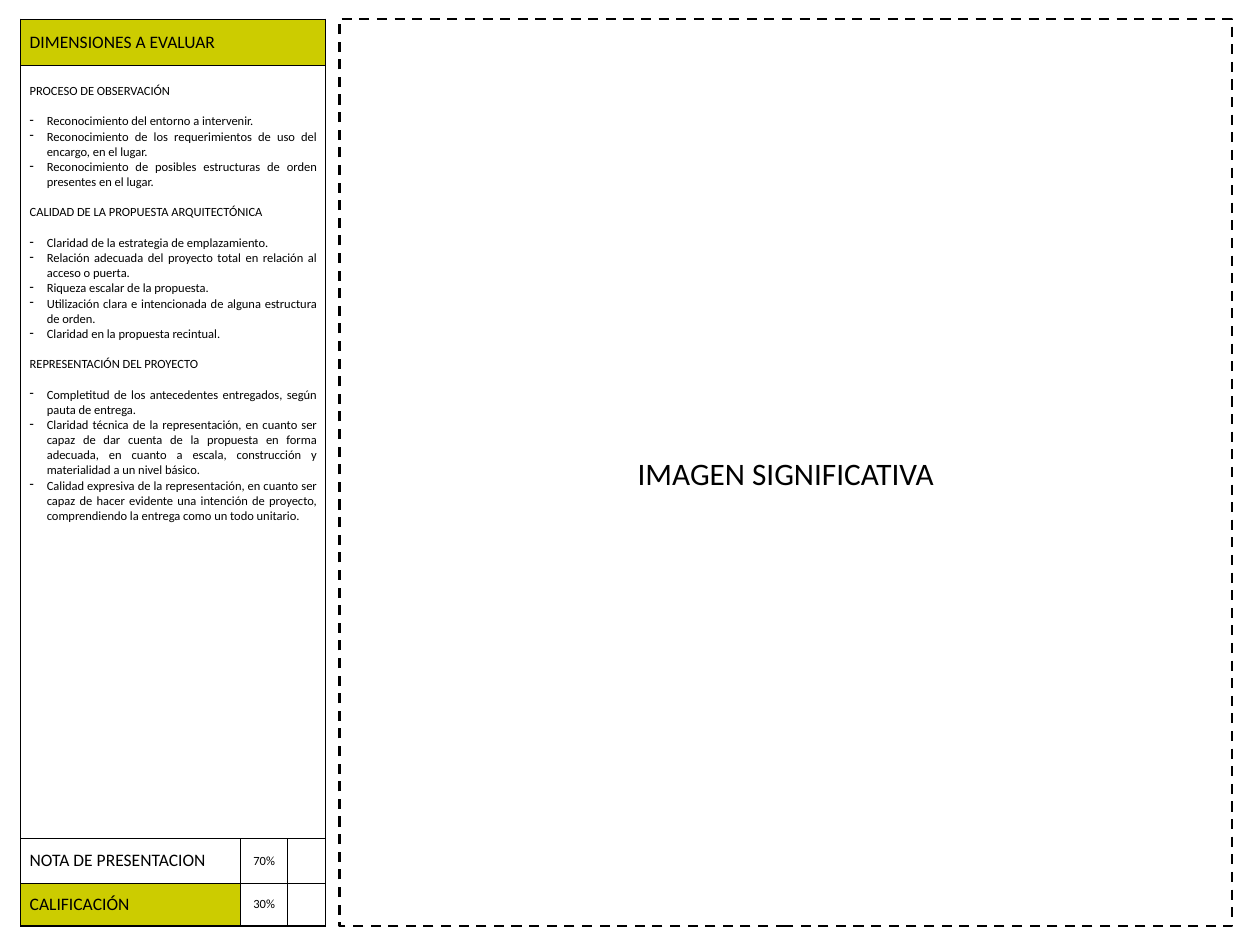
from lxml import etree
from pptx import Presentation
from pptx.dml.color import RGBColor
from pptx.enum.dml import MSO_LINE
from pptx.enum.shapes import MSO_SHAPE
from pptx.enum.text import MSO_ANCHOR, PP_ALIGN
from pptx.oxml.ns import qn
from pptx.util import Inches, Pt

BLACK = RGBColor(0x00, 0x00, 0x00)
WHITE = RGBColor(0xFF, 0xFF, 0xFF)
OLIVE = RGBColor(0xCC, 0xCC, 0x00)

LEFT, CENTER, JUSTIFY = PP_ALIGN.LEFT, PP_ALIGN.CENTER, PP_ALIGN.JUSTIFY
TOP, MIDDLE = MSO_ANCHOR.TOP, MSO_ANCHOR.MIDDLE
RECTANGLE, DASH = MSO_SHAPE.RECTANGLE, MSO_LINE.DASH

# The 14 x 10.5 inch slide is a grid of 56 columns by 42 rows.
GRID = 0.25
COLUMNS, ROWS = 56, 42
THIN, THICK = 0.5, 1

CRITERIA = {
    "PROCESO DE OBSERVACIÓN": [
        "Reconocimiento del entorno a intervenir.",
        "Reconocimiento de los requerimientos de uso del encargo, en el lugar.",
        "Reconocimiento de posibles estructuras de orden presentes en el lugar.",
    ],
    "CALIDAD DE LA PROPUESTA ARQUITECTÓNICA": [
        "Claridad de la estrategia de emplazamiento.",
        "Relación adecuada del proyecto total en relación al acceso o puerta.",
        "Riqueza escalar de la propuesta.",
        "Utilización clara e intencionada de alguna estructura de orden.",
        "Claridad en la propuesta recintual.",
    ],
    "REPRESENTACIÓN DEL PROYECTO": [
        "Completitud de los antecedentes entregados, según pauta de entrega.",
        "Claridad técnica de la representación, en cuanto ser capaz de dar cuenta "
        "de la propuesta en forma adecuada, en cuanto a escala, construcción y "
        "materialidad a un nivel básico.",
        "Calidad expresiva de la representación, en cuanto ser capaz de hacer "
        "evidente una intención de proyecto, comprendiendo la entrega como un "
        "todo unitario.",
    ],
}
GRADES = [("NOTA DE PRESENTACION", "70%", WHITE), ("CALIFICACIÓN", "30%", OLIVE)]


def grid(units):
    return Inches(units * GRID)


class SlideBuilder:
    font_name = "Calibri"
    title_size, label_size, body_size = 25, 14, 10
    blank_line = Pt(12.2)
    bullet_indent = Inches(0.19)

    def __init__(self, slide):
        self.slide = slide

    def add_text(self, paragraph, text, size, align=LEFT):
        paragraph.alignment = align
        run = paragraph.add_run()
        run.text = text
        run.font.name = self.font_name
        run.font.size = Pt(size)
        run.font.color.rgb = BLACK

    def add_dash(self, paragraph):
        """Give the paragraph a hanging dash bullet."""
        properties = paragraph._p.get_or_add_pPr()
        properties.set("marL", str(self.bullet_indent))
        properties.set("indent", str(-self.bullet_indent))
        etree.SubElement(properties, qn("a:buChar")).set("char", "-")

    def image_panel(self, left, top, width, height, text):
        panel = self.slide.shapes.add_shape(
            RECTANGLE, grid(left), grid(top), grid(width), grid(height))
        panel.shadow.inherit = False
        panel.fill.background()
        panel.line.color.rgb = BLACK
        panel.line.width = Pt(2)
        panel.line.dash_style = DASH
        panel.text_frame.vertical_anchor = MIDDLE
        self.add_text(panel.text_frame.paragraphs[0], text, self.title_size, CENTER)

    def table(self, left, top, widths, heights):
        table = self.slide.shapes.add_table(
            len(heights), len(widths), grid(left), grid(top),
            grid(sum(widths)), grid(sum(heights))).table
        table.first_row = table.horz_banding = False
        for column, width in zip(table.columns, widths):
            column.width = grid(width)
        for row, height in zip(table.rows, heights):
            row.height = grid(height)
        return table

    def cell(self, cell, borders, fill=None, text="", size=label_size,
             align=LEFT, anchor=MIDDLE):
        """Style a cell; borders are the left, right, top and bottom widths."""
        cell.vertical_anchor = anchor
        if fill is None:
            cell.fill.background()
        else:
            cell.fill.solid()
            cell.fill.fore_color.rgb = fill
        properties = cell._tc.get_or_add_tcPr()
        for position, (side, width) in enumerate(zip("LRTB", borders)):
            line = etree.Element(qn(f"a:ln{side}"), w=str(Pt(width)))
            solid = etree.SubElement(line, qn("a:solidFill"))
            etree.SubElement(solid, qn("a:srgbClr"), val=str(BLACK))
            properties.insert(position, line)
        if text:
            self.add_text(cell.text_frame.paragraphs[0], text, size, align)

    def criteria(self, cell, sections):
        cell.margin_top = Inches(0.2)
        frame = cell.text_frame
        for number, (heading, items) in enumerate(sections.items()):
            paragraph = frame.add_paragraph() if number else frame.paragraphs[0]
            if number:
                paragraph.space_before = self.blank_line
            paragraph.space_after = self.blank_line
            self.add_text(paragraph, heading, self.body_size, JUSTIFY)
            for item in items:
                paragraph = frame.add_paragraph()
                self.add_text(paragraph, item, self.body_size, JUSTIFY)
                self.add_dash(paragraph)


def main():
    presentation = Presentation()
    presentation.slide_width, presentation.slide_height = grid(COLUMNS), grid(ROWS)
    builder = SlideBuilder(presentation.slides.add_slide(presentation.slide_layouts[6]))

    top, height = 0.84, 40.32
    builder.image_panel(15.08, top, 39.68, height, "IMAGEN SIGNIFICATIVA")

    header, note, grade = 2.08, 1.96, 1.92
    body = height - header - note - grade
    rubric = builder.table(0.92, top, [9.76, 2.12, 1.68], [header, body, note, grade])

    for row in (0, 1):
        rubric.cell(row, 0).merge(rubric.cell(row, 2))
    builder.cell(rubric.cell(0, 0), (THICK, THICK, THIN, THICK), OLIVE,
                 "DIMENSIONES A EVALUAR")
    builder.cell(rubric.cell(1, 0), (THICK,) * 4, anchor=TOP)
    builder.criteria(rubric.cell(1, 0), CRITERIA)

    for row, (label, weight, fill) in enumerate(GRADES, start=2):
        above = THICK if row == 2 else THIN
        below = THIN if row == 2 else THICK
        builder.cell(rubric.cell(row, 0), (THICK, THIN, above, below), fill, label)
        builder.cell(rubric.cell(row, 1), (THIN, THICK, above, below), None,
                     weight, builder.body_size, CENTER)
        builder.cell(rubric.cell(row, 2), (THICK, THICK, above, below))

    presentation.save("out.pptx")


if __name__ == "__main__":
    main()
